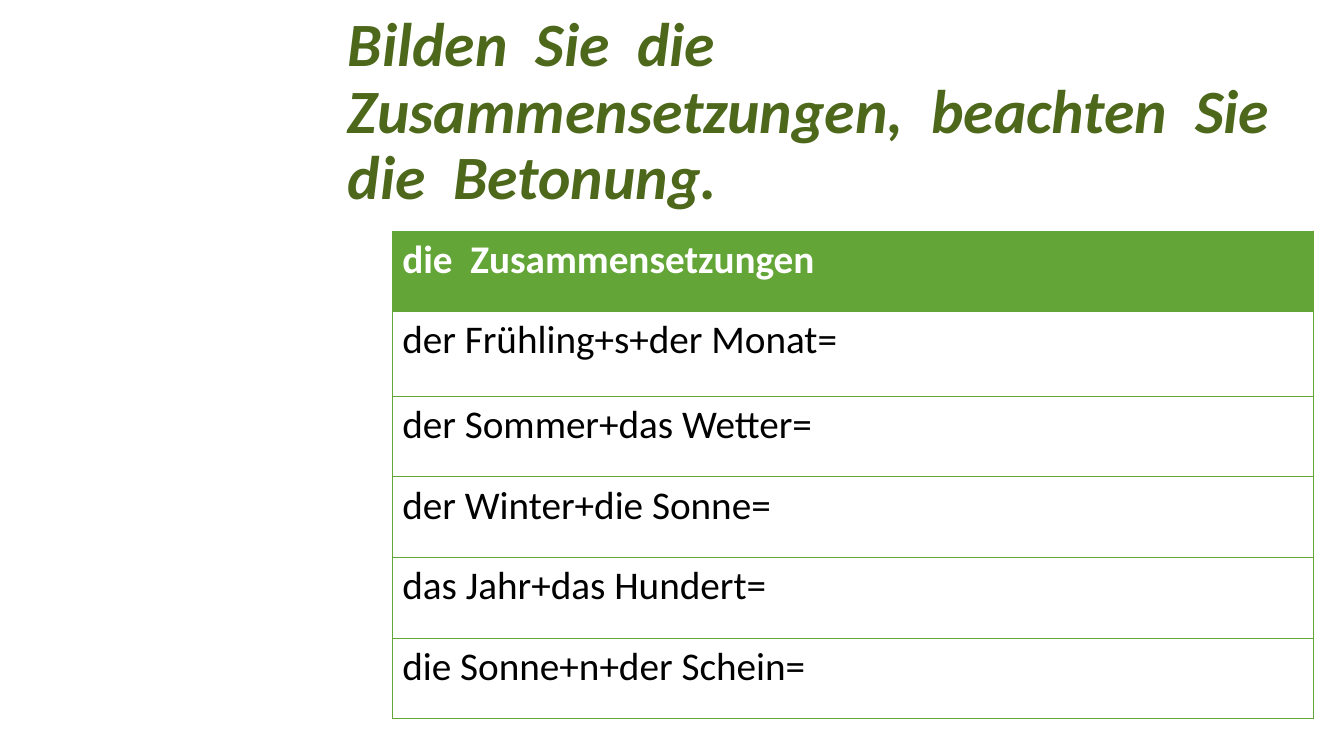
from dataclasses import dataclass

from lxml.etree import SubElement
from pptx import Presentation
from pptx.dml.color import RGBColor
from pptx.enum.text import MSO_ANCHOR
from pptx.oxml.ns import qn
from pptx.util import Inches, Pt

GREEN = RGBColor(0x63, 0xA5, 0x37)
DARK_GREEN = RGBColor(0x4D, 0x67, 0x1B)
WHITE = RGBColor(0xFF, 0xFF, 0xFF)
BLACK = RGBColor(0x00, 0x00, 0x00)
FONT = "Calibri"
COL_WIDTHS = (5.94, 3.2)


@dataclass
class Row:
    text: str
    height: float = 0.8
    header: bool = False


ROWS = [
    Row("die  Zusammensetzungen", header=True),
    Row("der Frühling+s+der Monat=", height=0.84),
    Row("der Sommer+das Wetter="),
    Row("der Winter+die Sonne="),
    Row("das Jahr+das Hundert="),
    Row("die Sonne+n+der Schein="),
]


def set_font(p, size: float, color: RGBColor, bold: bool, italic: bool = False) -> None:
    font = p.font
    font.name, font.size = FONT, Pt(size)
    font.bold, font.italic = bold, italic
    font.color.rgb = color


def set_borders(cell, hidden: str) -> None:
    tc_pr = cell._tc.get_or_add_tcPr()
    for i, side in enumerate(("lnL", "lnR", "lnT", "lnB")):
        ln = SubElement(tc_pr, qn(f"a:{side}"), w=str(Pt(0.5)))
        if side == hidden:
            SubElement(ln, qn("a:noFill"))
        else:
            fill = SubElement(ln, qn("a:solidFill"))
            SubElement(fill, qn("a:srgbClr"), val=str(GREEN))
        tc_pr.insert(i, ln)


def add_title(s) -> None:
    box = s.shapes.add_textbox(Inches(3.35), Inches(0.4), Inches(9.56), Inches(1.45))
    tf = box.text_frame
    tf.word_wrap = True
    tf.vertical_anchor = MSO_ANCHOR.MIDDLE
    p = tf.paragraphs[0]
    p.text = "Bilden  Sie  die  Zusammensetzungen,  beachten  Sie  die  Betonung."
    p.line_spacing = 0.9
    set_font(p, 44, DARK_GREEN, bold=True, italic=True)


def add_compounds(s) -> None:
    height = sum(row.height for row in ROWS)
    table = s.shapes.add_table(
        len(ROWS), len(COL_WIDTHS), Inches(3.89), Inches(2.29),
        Inches(sum(COL_WIDTHS)), Inches(height),
    ).table
    table.horz_banding = False
    for column, width in zip(table.columns, COL_WIDTHS):
        column.width = Inches(width)
    for i, row in enumerate(ROWS):
        table.rows[i].height = Inches(row.height)
        for cell, text, hidden in zip(table.rows[i].cells, (row.text, ""), ("lnR", "lnL")):
            if row.header:
                cell.fill.solid()
                cell.fill.fore_color.rgb = GREEN
            else:
                cell.fill.background()
            set_borders(cell, hidden)
            p = cell.text_frame.paragraphs[0]
            p.text = text
            set_font(p, 28, WHITE if row.header else BLACK, bold=row.header)


def main() -> None:
    prs = Presentation()
    prs.slide_width, prs.slide_height = Inches(13.33), Inches(7.5)
    s = prs.slides.add_slide(prs.slide_layouts[6])
    add_title(s)
    add_compounds(s)
    prs.save("out.pptx")


if __name__ == "__main__":
    main()
